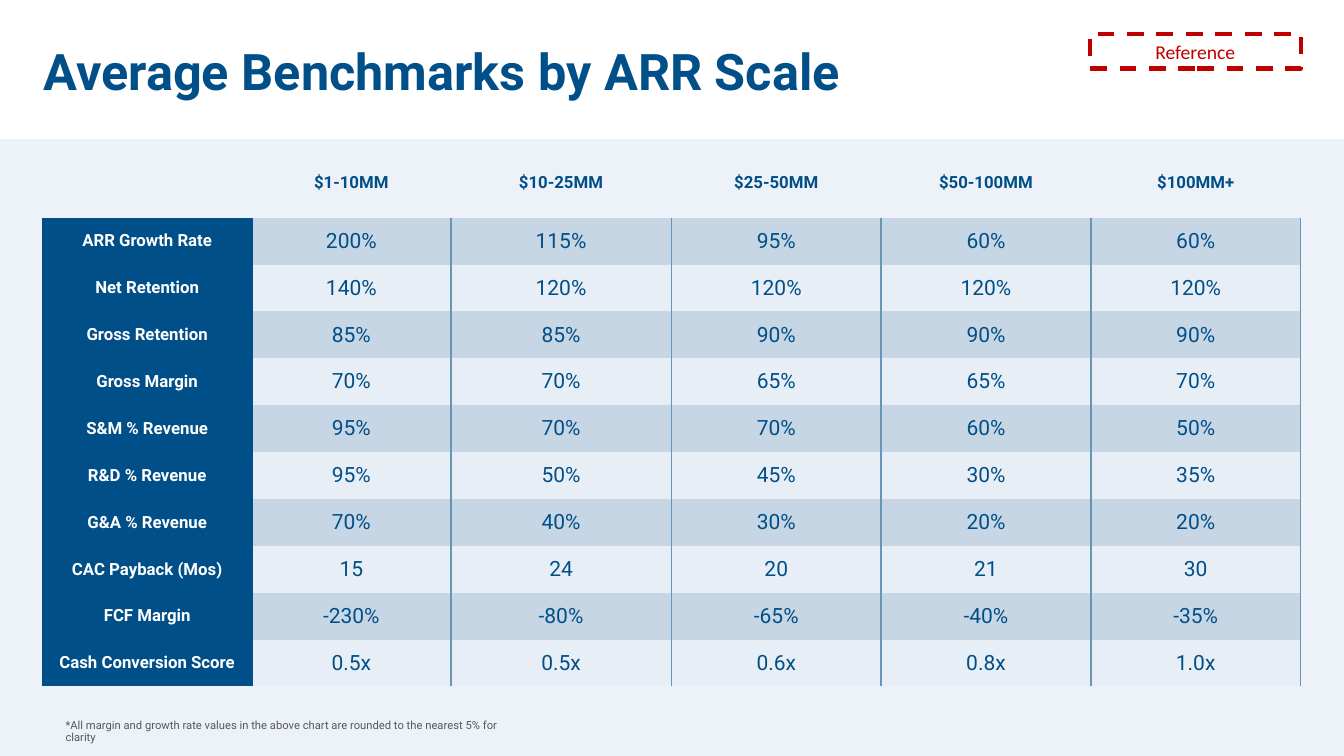
from lxml import etree
from pptx import Presentation
from pptx.dml.color import RGBColor
from pptx.enum.dml import MSO_LINE
from pptx.enum.shapes import MSO_SHAPE
from pptx.enum.text import MSO_ANCHOR, MSO_AUTO_SIZE, PP_ALIGN
from pptx.oxml.ns import qn
from pptx.util import Inches, Pt

RECT = MSO_SHAPE.RECTANGLE
DASH = MSO_LINE.DASH
TOP, MIDDLE = MSO_ANCHOR.TOP, MSO_ANCHOR.MIDDLE
LEFT, CENTER = PP_ALIGN.LEFT, PP_ALIGN.CENTER
FIXED = MSO_AUTO_SIZE.NONE

COLORS = {
    "blue": "014F88",
    "band": "EDF2F9",
    "stripe": "C7D6E4",
    "rule": "6695B7",
    "red": "C00000",
    "grey": "54585A",
    "white": "FFFFFF",
}
PLAIN = "{2D5ABB26-0587-4C30-8999-92F81FD0307C}"
WIDTHS = [2.08, 1.97, 2.19, 2.08, 2.08, 2.08]
HEAD, ROW = 0.69, 0.465
SCALES = ["$1-10MM", "$10-25MM", "$25-50MM", "$50-100MM", "$100MM+"]
METRICS = [
    ("ARR Growth Rate", "200%", "115%", "95%", "60%", "60%"),
    ("Net Retention", "140%", "120%", "120%", "120%", "120%"),
    ("Gross Retention", "85%", "85%", "90%", "90%", "90%"),
    ("Gross Margin", "70%", "70%", "65%", "65%", "70%"),
    ("S&M % Revenue", "95%", "70%", "70%", "60%", "50%"),
    ("R&D % Revenue", "95%", "50%", "45%", "30%", "35%"),
    ("G&A % Revenue", "70%", "40%", "30%", "20%", "20%"),
    ("CAC Payback (Mos)", "15", "24", "20", "21", "30"),
    ("FCF Margin", "-230%", "-80%", "-65%", "-40%", "-35%"),
    ("Cash Conversion Score", "0.5x", "0.5x", "0.6x", "0.8x", "1.0x"),
]


def color(name):
    """Return the named colour."""
    return RGBColor.from_string(COLORS[name])


def write(frame, text, size, tint, bold=False, font="Roboto", align=CENTER):
    """Write one formatted run into the first paragraph of a frame."""
    para = frame.paragraphs[0]
    para.alignment = align
    run = para.add_run()
    run.text = text
    run.font.name = font
    run.font.size = Pt(size)
    run.font.bold = bold
    run.font.color.rgb = color(tint)
    return para


def place(shape, left, top, width, height):
    """Move and size a shape, in inches."""
    shape.left, shape.top = Inches(left), Inches(top)
    shape.width, shape.height = Inches(width), Inches(height)


def add_rect(slide, left, top, width, height):
    """Add a rectangle without shadow."""
    box = slide.shapes.add_shape(
        RECT, Inches(left), Inches(top), Inches(width), Inches(height))
    box.shadow.inherit = False
    return box


def add_band(slide):
    """Add the pale band behind everything else."""
    band = add_rect(slide, 0, 1.38, 13.33, 6.12)
    band.fill.solid()
    band.fill.fore_color.rgb = color("band")
    band.line.fill.background()
    slide.shapes._spTree.insert(2, band._element)


def add_title(slide):
    """Fill the title placeholder."""
    title = slide.shapes.title
    place(title, 0.43, 0.41, 11.5, 0.65)
    frame = title.text_frame
    frame.auto_size = FIXED
    frame.vertical_anchor = MIDDLE
    frame.margin_left = 0
    para = write(frame, "Average Benchmarks by ARR Scale", 36, "blue", True,
                 align=LEFT)
    para.line_spacing = 0.9


def add_note(slide):
    """Fill the body placeholder with the footnote."""
    note = slide.placeholders[1]
    place(note, 0.55, 7.09, 4.77, 0.13)
    frame = note.text_frame
    frame.auto_size = FIXED
    frame.vertical_anchor = TOP
    props = frame.paragraphs[0]._p.get_or_add_pPr()
    props.set("marL", "0")
    props.set("indent", "0")
    etree.SubElement(props, qn("a:buNone"))
    para = write(frame, "*All margin and growth rate values in the above "
                 "chart are rounded to the nearest 5% for clarity",
                 8, "grey", align=LEFT)
    para.line_spacing = 0.9
    para.space_before = Pt(0)


def add_tag(slide):
    """Add the dashed reference tag."""
    tag = add_rect(slide, 10.81, 0.34, 2.09, 0.34)
    tag.fill.background()
    tag.line.color.rgb = color("red")
    tag.line.width = Pt(3)
    tag.line.dash_style = DASH
    tag.text_frame.vertical_anchor = MIDDLE
    write(tag.text_frame, "Reference", 14, "red", font="Calibri")


def shade(cell, tint, alpha=100):
    """Fill a cell, with opacity in percent."""
    cell.fill.solid()
    cell.fill.fore_color.rgb = color(tint)
    if alpha < 100:
        hue = cell._tc.tcPr.find(".//" + qn("a:srgbClr"))
        etree.SubElement(hue, qn("a:alpha"), val=str(alpha * 1000))


def edge(cell, side, tint, width):
    """Draw the left (L) or right (R) border of a cell."""
    line = etree.Element(qn("a:ln" + side), w=str(Pt(width)))
    fill = etree.SubElement(line, qn("a:solidFill"))
    etree.SubElement(fill, qn("a:srgbClr"), val=COLORS[tint])
    cell._tc.get_or_add_tcPr().insert(0 if side == "L" else 1, line)


def set_cell(cell, row, col, text):
    """Write and style one cell by its place in the grid."""
    cell.vertical_anchor = MIDDLE
    if row == 0:
        cell.fill.background()
        if text:
            write(cell.text_frame, text, 12, "blue", True)
    elif col == 0:
        shade(cell, "blue")
        edge(cell, "R", "blue", 1)
        write(cell.text_frame, text, 12, "white", True)
    else:
        shade(cell, "stripe", 100 if row % 2 else 12)
        edge(cell, "L", *(("blue", 1) if col == 1 else ("rule", 1.5)))
        edge(cell, "R", "rule", 1.5)
        write(cell.text_frame, text, 15, "blue")


def add_grid(slide):
    """Add the benchmark table."""
    rows = [("", *SCALES), *METRICS]
    high = HEAD + ROW * len(METRICS)
    frame = slide.shapes.add_table(
        len(rows), len(WIDTHS), Inches(0.42), Inches(1.47),
        Inches(sum(WIDTHS)), Inches(high))
    table = frame.table
    table.first_row = table.horz_banding = False
    table._tbl.tblPr.find(qn("a:tableStyleId")).text = PLAIN
    for col, width in enumerate(WIDTHS):
        table.columns[col].width = Inches(width)
    for row, texts in enumerate(rows):
        table.rows[row].height = Inches(ROW if row else HEAD)
        for col, text in enumerate(texts):
            set_cell(table.cell(row, col), row, col, text)


def main():
    """Build and save the slide."""
    deck = Presentation()
    deck.slide_width, deck.slide_height = Inches(13.33), Inches(7.5)
    slide = deck.slides.add_slide(deck.slide_layouts[1])
    add_band(slide)
    add_title(slide)
    add_tag(slide)
    add_note(slide)
    add_grid(slide)
    deck.save("out.pptx")


if __name__ == "__main__":
    main()
